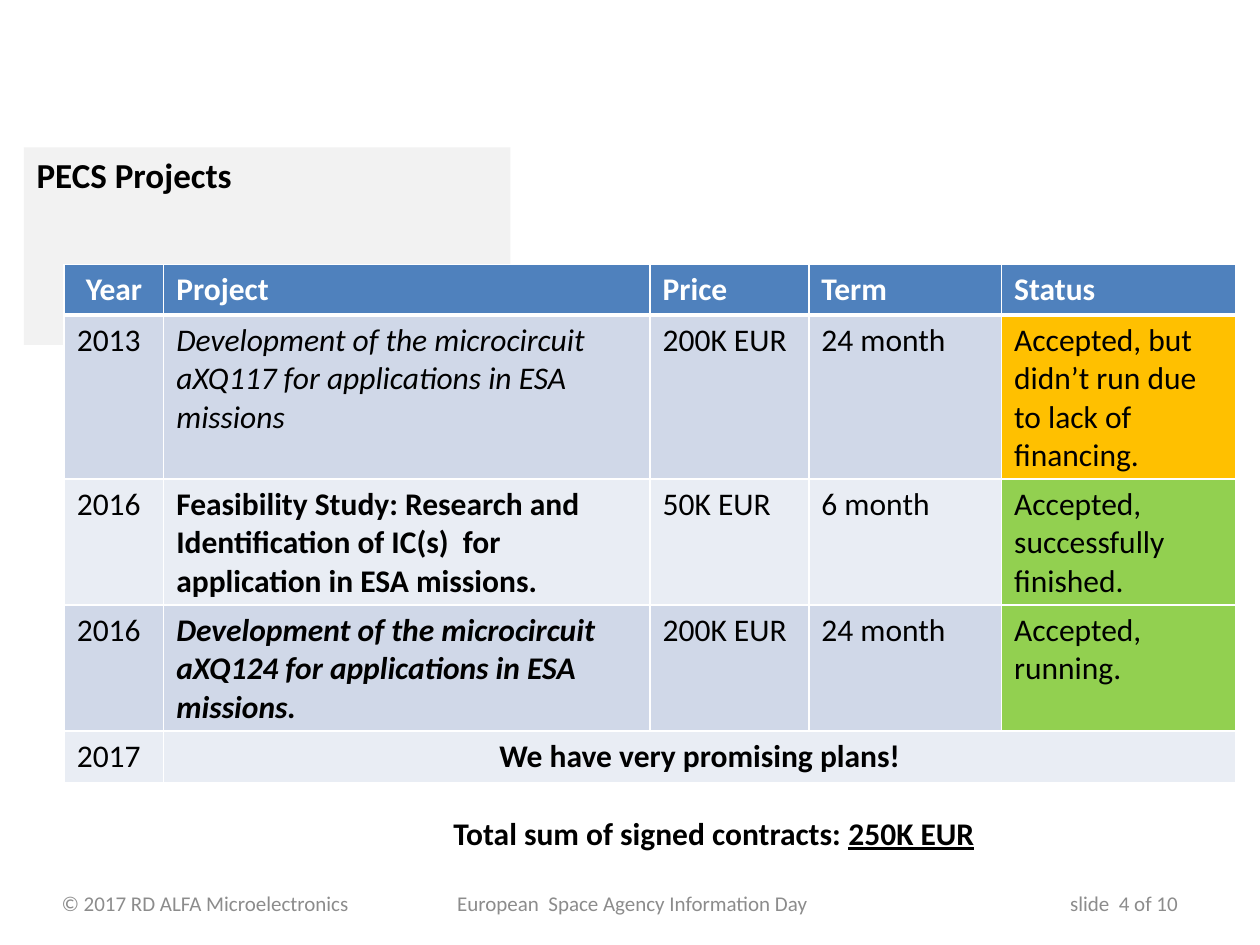
import pptx
import pptx.dml.color
import pptx.enum.text
import pptx.oxml
import pptx.oxml.ns
import pptx.util
from pptx.util import Inches

ALIGN = pptx.enum.text.PP_ALIGN
ANCHOR = pptx.enum.text.MSO_ANCHOR
AUTO_SIZE = pptx.enum.text.MSO_AUTO_SIZE

HEADER_FILL = "4F81BD"
BAND_FILLS = ["D0D8E8", "E9EDF4"]
STOPPED, ACCEPTED = "FFC000", "92D050"

COLUMN_WIDTHS = [0.79, 3.86, 1.26, 1.53, 1.86]
ROW_HEIGHTS = [0.4, 1.3, 1, 1, 0.41]
HEADINGS = ["Year", "Project", "Price", "Term", "Status"]
# Each project: cell texts, format of the project name, status fill
PROJECTS = [
    (["2013", "Development of the microcircuit  aXQ117 for applications in ESA missions",
      "200K EUR", "24 month", "Accepted, but didn’t run due to lack of financing."],
     {"italic": True}, STOPPED),
    (["2016", "Feasibility Study: Research and Identification of IC(s)  for application in ESA missions.",
      "50K EUR", "6 month", "Accepted, successfully finished."],
     {"bold": True}, ACCEPTED),
    (["2016", "Development of the microcircuit  aXQ124 for applications in ESA missions.",
      "200K EUR", "24 month", "Accepted, running."],
     {"bold": True, "italic": True}, ACCEPTED),
]


def color(value):
    return pptx.dml.color.RGBColor.from_string(value)


def set_fill(item, value):
    item.fill.solid()
    item.fill.fore_color.rgb = color(value)


def add_run(paragraph, text, size=18, font_color="000000", **formats):
    run = paragraph.add_run()
    run.text = text
    run.font.color.rgb = color(font_color)
    values = {"name": "Calibri", "size": pptx.util.Pt(size), "bold": False, "italic": False}
    for name, value in {**values, **formats}.items():
        setattr(run.font, name, value)


def place(shape, left, top, width, height):
    values = {"left": left, "top": top, "width": width, "height": height}
    for name, value in values.items():
        setattr(shape, name, Inches(value))


def format_frame(frame, **formats):
    for name, value in formats.items():
        setattr(frame, name, value)


def add_tab_stops(paragraph, stops):
    properties = paragraph._p.get_or_add_pPr()
    tab_list = pptx.oxml.parse_xml(f"<a:tabLst {pptx.oxml.ns.nsdecls('a')}/>")
    for position, alignment in stops:
        tab_list.append(pptx.oxml.parse_xml(
            f"<a:tab {pptx.oxml.ns.nsdecls('a')} pos='{Inches(position)}' algn='{alignment}'/>"))
    properties.append(tab_list)


def add_borders(cell, bottom_points):
    properties = cell._tc.get_or_add_tcPr()
    for side, points in {"L": 1, "R": 1, "T": 1, "B": bottom_points}.items():
        properties.append(pptx.oxml.parse_xml(
            f"<a:ln{side} {pptx.oxml.ns.nsdecls('a')} w='{pptx.util.Pt(points)}'>"
            f"<a:solidFill><a:srgbClr val='FFFFFF'/></a:solidFill></a:ln{side}>"))


def fill_cell(cell, text, fill, alignment=ALIGN.LEFT, bottom_points=1, **formats):
    add_borders(cell, bottom_points)
    set_fill(cell, fill)
    paragraph = cell.text_frame.paragraphs[0]
    paragraph.alignment = alignment
    add_run(paragraph, text, **formats)


def add_title(slide):
    title = slide.shapes.title
    place(title, 0.19, 1.17, 3.86, 0.44)
    set_fill(title, "F2F2F2")
    format_frame(title.text_frame, word_wrap=True, vertical_anchor=ANCHOR.TOP,
                 auto_size=AUTO_SIZE.SHAPE_TO_FIT_TEXT)
    paragraph = title.text_frame.paragraphs[0]
    paragraph.alignment = ALIGN.LEFT
    add_run(paragraph, "PECS Projects", size=20, bold=True)


def add_project_table(slide):
    table = slide.shapes.add_table(
        len(ROW_HEIGHTS), len(COLUMN_WIDTHS), Inches(0.51), Inches(2.1),
        Inches(sum(COLUMN_WIDTHS)), Inches(sum(ROW_HEIGHTS))).table
    for column, width in zip(table.columns, COLUMN_WIDTHS):
        column.width = Inches(width)
    for row, height in zip(table.rows, ROW_HEIGHTS):
        row.height = Inches(height)

    # Header row
    for index, heading in enumerate(HEADINGS):
        alignment = ALIGN.CENTER if index == 0 else ALIGN.LEFT
        fill_cell(table.cell(0, index), heading, HEADER_FILL, alignment,
                  bottom_points=3, font_color="FFFFFF", bold=True)

    # Project rows
    for row, (texts, name_format, status_fill) in enumerate(PROJECTS, start=1):
        band = BAND_FILLS[(row - 1) % 2]
        for index, text in enumerate(texts):
            fill = status_fill if HEADINGS[index] == "Status" else band
            formats = name_format if HEADINGS[index] == "Project" else {}
            fill_cell(table.cell(row, index), text, fill, **formats)

    # Closing row with plans across the remaining columns
    last = len(ROW_HEIGHTS) - 1
    plans = table.cell(last, 1)
    plans.merge(table.cell(last, len(COLUMN_WIDTHS) - 1))
    fill_cell(table.cell(last, 0), "2017", BAND_FILLS[1])
    fill_cell(plans, "We have very promising plans!", BAND_FILLS[1], ALIGN.CENTER, bold=True)


def add_text_box(slide, position, **formats):
    box = slide.shapes.add_textbox(*map(Inches, position))
    format_frame(box.text_frame, **formats)
    return box.text_frame.paragraphs[0]


def main():
    presentation = pptx.Presentation()
    presentation.slide_width = Inches(10)
    presentation.slide_height = Inches(7.5)
    slide = presentation.slides.add_slide(presentation.slide_layouts[5])

    # Footer in three parts
    footer = add_text_box(slide, (0.39, 6.97, 9.53, 0.4),
                          word_wrap=True, vertical_anchor=ANCHOR.MIDDLE)
    add_tab_stops(footer, [(3.14, "l"), (8.86, "r")])
    add_run(footer, "© 2017 RD ALFA Microelectronics\tEuropean  Space Agency Information Day"
                    "\tslide  4 of 10", size=12, font_color="8C8C8C")

    add_title(slide)
    add_project_table(slide)

    # Contract total
    total = add_text_box(slide, (3.5, 6.41, 4.36, 0.4), word_wrap=False,
                         auto_size=AUTO_SIZE.SHAPE_TO_FIT_TEXT)
    add_run(total, "Total sum of signed contracts: ", bold=True)
    add_run(total, "250K EUR", bold=True, underline=True)

    presentation.save("out.pptx")


if __name__ == "__main__":
    main()
